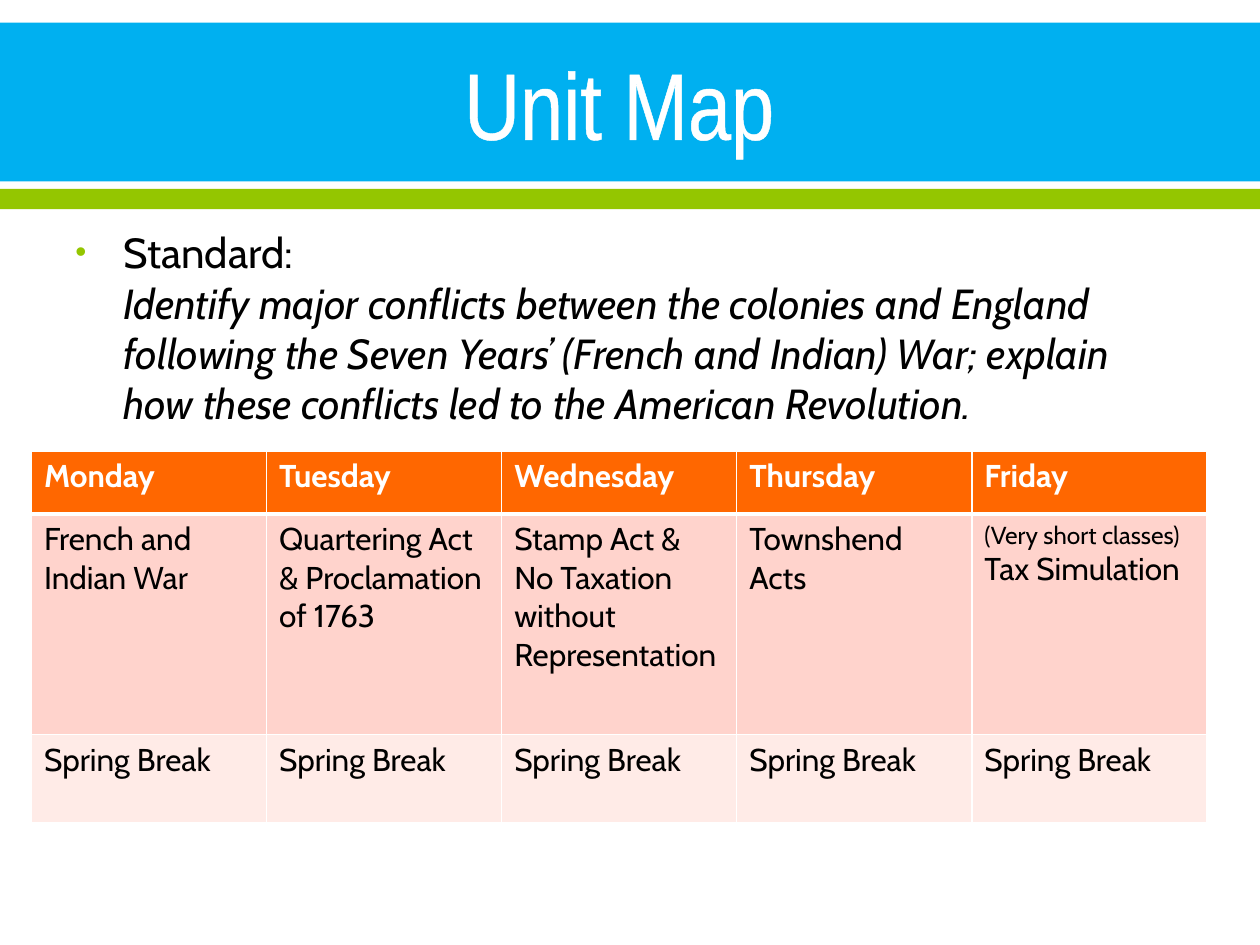
from dataclasses import dataclass

from lxml.etree import SubElement
from pptx import Presentation
from pptx.dml.color import RGBColor
from pptx.enum.shapes import MSO_SHAPE
from pptx.enum.text import MSO_ANCHOR, PP_ALIGN
from pptx.oxml import parse_xml
from pptx.oxml.ns import nsdecls, qn
from pptx.util import Inches, Pt


@dataclass(frozen=True)
class Theme:
    blue: str = "00B0F0"
    green: str = "94C600"
    orange: str = "FF6700"
    pink: str = "FFD3CC"
    pale_pink: str = "FFEBE7"
    white: str = "FFFFFF"
    black: str = "000000"
    title_font: str = "Arial Narrow"
    body_font: str = "Cabin"
    title_size: int = 54
    body_size: int = 24
    cell_size: int = 18
    note_size: int = 14


theme = Theme()


def add_run(paragraph, text, size, color, font=theme.body_font, bold=False, italic=False):
    run = paragraph.add_run()
    run.text = text
    run.font.name = font
    run.font.size = Pt(size)
    run.font.bold = bold
    run.font.italic = italic
    run.font.color.rgb = RGBColor.from_string(color)
    return run


def line_xml(tag, points, color):
    """Return a solid DrawingML line, for a cell border or a text outline."""
    return parse_xml(
        f'<a:{tag} {nsdecls("a")} w="{Pt(points)}"><a:solidFill>'
        f'<a:srgbClr val="{color}"/></a:solidFill></a:{tag}>'
    )


presentation = Presentation()
presentation.slide_width = Inches(10)
presentation.slide_height = Inches(7.5)
slide = presentation.slides.add_slide(presentation.slide_layouts[5])
margin = Inches(0.5)
content_width = presentation.slide_width - 2 * margin

# Header bands
for top, height, color in [(0.18, 1.26, theme.blue), (1.5, 0.16, theme.green)]:
    band = slide.shapes.add_shape(
        MSO_SHAPE.RECTANGLE, 0, Inches(top), presentation.slide_width, Inches(height)
    )
    band.shadow.inherit = False
    band.fill.solid()
    band.fill.fore_color.rgb = RGBColor.from_string(color)
    band.line.fill.background()

# Title, brought in front of the bands
title = slide.shapes.title
title.element.getparent().append(title.element)
title.left, title.top = margin, Inches(0.2)
title.width, title.height = content_width, Inches(1.22)
title.text_frame.vertical_anchor = MSO_ANCHOR.MIDDLE
paragraph = title.text_frame.paragraphs[0]
paragraph.alignment = PP_ALIGN.CENTER
run = add_run(paragraph, "Unit Map ", theme.title_size, theme.white, theme.title_font)
run.font.fill._xPr.insert(0, line_xml("ln", 1.1, theme.white))

# Standard
standard = slide.shapes.add_textbox(margin, Inches(1.75), content_width, Inches(1.75))
standard.text_frame.word_wrap = True
paragraph = standard.text_frame.paragraphs[0]
paragraph.space_before = Pt(0.2 * theme.body_size)
add_run(paragraph, "Standard:", theme.body_size, theme.black)
paragraph.add_line_break()
add_run(
    paragraph,
    "Identify major conflicts between the colonies and England following the "
    "Seven Years’ (French and Indian) War; explain how these conflicts led to "
    "the American Revolution.",
    theme.body_size,
    theme.black,
    italic=True,
)
properties = paragraph._p.get_or_add_pPr()
properties.set("marL", str(Inches(0.38)))
properties.set("indent", str(-Inches(0.38)))
bullet_color = SubElement(properties, qn("a:buClr"))
SubElement(bullet_color, qn("a:srgbClr"), val=theme.green)
SubElement(properties, qn("a:buSzPct"), val="75000")
SubElement(properties, qn("a:buFont"), typeface="Arial")
SubElement(properties, qn("a:buChar"), char="•")

# Week table: each cell is a list of paragraphs
days = ["Monday", "Tuesday", "Wednesday", "Thursday", "Friday"]
lessons = [
    ["French and Indian War"],
    ["Quartering Act & Proclamation of 1763"],
    ["Stamp Act &", "No Taxation without Representation"],
    ["Townshend Acts"],
    ["(Very short classes)", "Tax Simulation"],
]
rows = [
    (0.5, theme.orange, [[day] for day in days]),
    (1.75, theme.pink, lessons),
    (0.7, theme.pale_pink, [["Spring Break"]] * len(days)),
]
table = slide.shapes.add_table(
    len(rows), len(days), Inches(0.25), Inches(3.58), Inches(9.33), Inches(2.95)
).table

for row_index, (height, fill, contents) in enumerate(rows):
    table.rows[row_index].height = Inches(height)
    is_header = row_index == 0
    borders = {
        "lnL": 1,
        "lnR": 1,
        "lnT": 3 if row_index == 1 else 1,
        "lnB": 3 if is_header else 1,
    }
    for column_index, lines in enumerate(contents):
        cell = table.cell(row_index, column_index)
        cell_properties = cell._tc.get_or_add_tcPr()
        for tag, points in borders.items():
            cell_properties.append(line_xml(tag, points, theme.white))
        cell.fill.solid()
        cell.fill.fore_color.rgb = RGBColor.from_string(fill)
        for line_index, text in enumerate(lines):
            frame = cell.text_frame
            paragraph = frame.add_paragraph() if line_index else frame.paragraphs[0]
            add_run(
                paragraph,
                text,
                theme.note_size if text.startswith("(") else theme.cell_size,
                theme.white if is_header else theme.black,
                bold=is_header,
            )

presentation.save("out.pptx")
